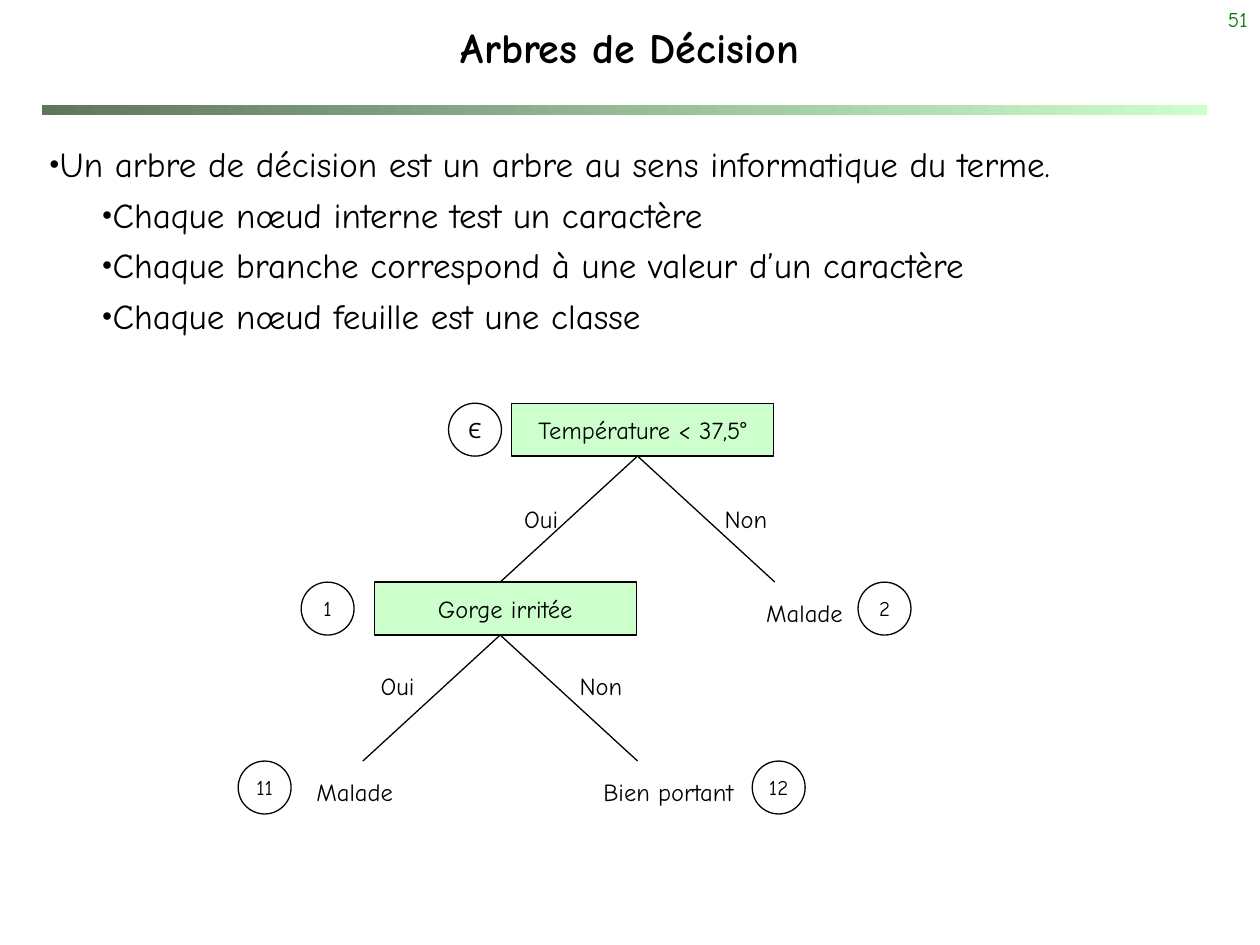
from dataclasses import dataclass

from lxml.etree import SubElement
from pptx import Presentation
from pptx.dml.color import RGBColor
from pptx.enum.shapes import MSO_CONNECTOR, MSO_SHAPE
from pptx.enum.text import MSO_ANCHOR, MSO_AUTO_SIZE, PP_ALIGN
from pptx.oxml.ns import qn
from pptx.util import Inches, Pt


@dataclass
class Theme:
    font: str = "Comic Neue"
    ink: RGBColor = RGBColor(0x00, 0x00, 0x00)
    paper: RGBColor = RGBColor(0xFF, 0xFF, 0xFF)
    mint: RGBColor = RGBColor(0xCC, 0xFF, 0xCC)
    moss: RGBColor = RGBColor(0x5E, 0x76, 0x5E)
    green: RGBColor = RGBColor(0x00, 0x80, 0x00)
    title: int = 24
    body: int = 20
    label: int = 14
    small: int = 12
    line: float = 0.75


theme = Theme()


def write(paragraph, text, size, align, color=theme.ink, bold=False, gap=0.2):
    """Fill a paragraph with one formatted run; gap is a share of the size."""
    paragraph.alignment = align
    paragraph.space_before = Pt(round(gap * size))
    run = paragraph.add_run()
    run.text = text
    run.font.name = theme.font
    run.font.size = Pt(size)
    run.font.bold = bold
    run.font.color.rgb = color


def add_node(kind, left, top, width, height, fill, text, size):
    """Add an outlined shape of the tree with centred text."""
    node = slide.shapes.add_shape(
        kind, Inches(left), Inches(top), Inches(width), Inches(height))
    node.shadow.inherit = False
    node.fill.solid()
    node.fill.fore_color.rgb = fill
    node.line.color.rgb = theme.ink
    node.line.width = Pt(theme.line)
    node.text_frame.word_wrap = False
    node.text_frame.vertical_anchor = MSO_ANCHOR.MIDDLE
    write(node.text_frame.paragraphs[0], text, size, PP_ALIGN.CENTER)


prs = Presentation()
prs.slide_width, prs.slide_height = Inches(10), Inches(7.5)
slide = prs.slides.add_slide(prs.slide_layouts[1])

# Gradient rule under the title
rule = slide.shapes.add_shape(
    MSO_SHAPE.RECTANGLE, Inches(0.33), Inches(0.83), Inches(9.25), Inches(0.08))
rule.shadow.inherit = False
rule.line.fill.background()
rule.fill.gradient()
rule.fill.gradient_angle = 0
for stop, color in zip(rule.fill.gradient_stops, (theme.moss, theme.mint)):
    stop.color.rgb = color

# Page number
page = slide.shapes.add_textbox(Inches(7.92), 0, Inches(2.08), Inches(0.5))
page.text_frame.word_wrap = True
write(page.text_frame.paragraphs[0], "51", theme.small, PP_ALIGN.RIGHT,
      theme.green, gap=0)

# Title
title = slide.shapes.title
title.left, title.top = Inches(0), Inches(0.08)
title.width, title.height = Inches(10), Inches(0.58)
title.text_frame.auto_size = MSO_AUTO_SIZE.NONE
title.text_frame.vertical_anchor = MSO_ANCHOR.MIDDLE
write(title.text_frame.paragraphs[0], "Arbres de Décision", theme.title,
      PP_ALIGN.CENTER, bold=True, gap=0)

# Definition list
definition = slide.placeholders[1]
definition.left, definition.top = Inches(0.08), Inches(1.08)
definition.width, definition.height = Inches(9.67), Inches(5.83)
frame = definition.text_frame
frame.auto_size = MSO_AUTO_SIZE.NONE
frame.vertical_anchor = MSO_ANCHOR.TOP
points = [
    (0, "Un arbre de décision est un arbre au sens informatique du terme."),
    (1, "Chaque nœud interne test un caractère"),
    (1, "Chaque branche correspond à une valeur d’un caractère"),
    (1, "Chaque nœud feuille est une classe"),
]
for index, (level, text) in enumerate(points):
    point = frame.add_paragraph() if index else frame.paragraphs[0]
    point.level = level
    write(point, text, theme.body, PP_ALIGN.JUSTIFY, gap=0.25)
    props = point._p.get_or_add_pPr()
    props.set("marL", str(Inches(0.42 * level)))
    props.set("indent", str(Inches(0.21)))
    SubElement(props, qn("a:buSzPct"), val="50000")
    SubElement(props, qn("a:buChar"), char="●")

# Tree grid: each level goes down one step and out by one spread
box_w, box_h = 2.08, 0.42
root_x, root_y = 5.06, 3.2
spread, step = 1.09, 1.42
tests = ["Température < 37,5°", "Gorge irritée"]

# Test boxes, each with its two branches
for depth, test in enumerate(tests):
    x, y = root_x - depth * spread, root_y + depth * step
    add_node(MSO_SHAPE.RECTANGLE, x - 1, y, box_w, box_h, theme.mint,
             test, theme.label)
    for side in (-1, 1):
        branch = slide.shapes.add_connector(
            MSO_CONNECTOR.STRAIGHT, Inches(x), Inches(y + box_h),
            Inches(x + side * spread), Inches(y + step))
        branch.line.color.rgb = theme.ink
        branch.line.width = Pt(theme.line)
        SubElement(branch._element.spPr, qn("a:effectLst"))

# Branch answers and leaf classes
labels = [
    ("Oui", 4.04, 3.95, 0.51), ("Non", 5.64, 3.95, 0.56),
    ("Oui", 2.9, 5.28, 0.51), ("Non", 4.49, 5.28, 0.56),
    ("Malade", 5.96, 4.7, 0.85), ("Malade", 2.39, 6.12, 0.85),
    ("Bien portant", 4.64, 6.12, 1.33),
]
for text, left, top, width in labels:
    label = slide.shapes.add_textbox(
        Inches(left), Inches(top), Inches(width), Inches(0.33))
    label.text_frame.word_wrap = False
    label.text_frame.auto_size = MSO_AUTO_SIZE.SHAPE_TO_FIT_TEXT
    write(label.text_frame.paragraphs[0], text, theme.label, PP_ALIGN.CENTER)

# Node numbers
numbers = [("Є", 3.56, 0), ("1", 2.39, 1), ("2", 6.81, 1),
           ("11", 1.89, 2), ("12", 5.97, 2)]
for number, left, depth in numbers:
    add_node(MSO_SHAPE.OVAL, left, root_y + depth * step, box_h, box_h,
             theme.paper, number, theme.small)

prs.save("out.pptx")
